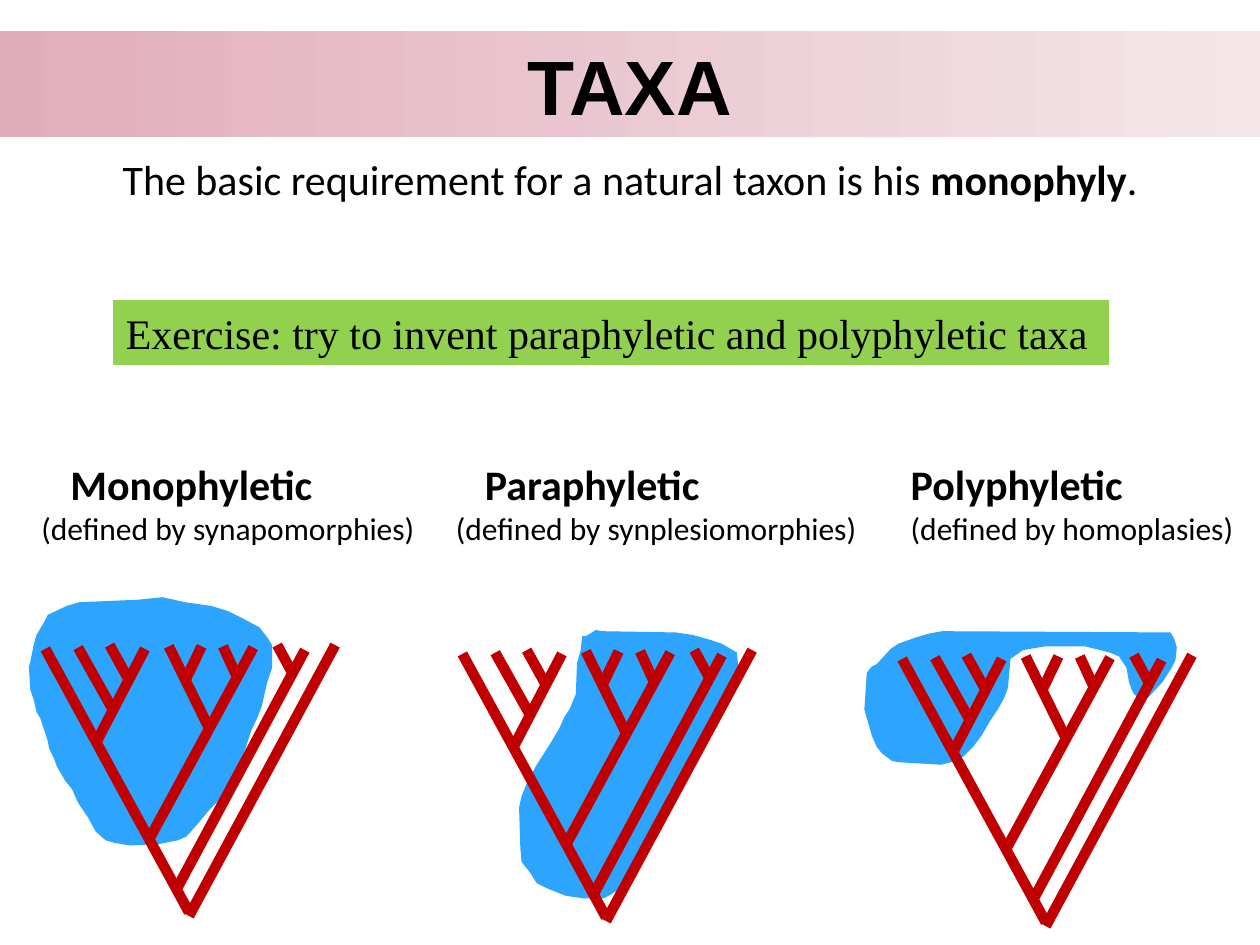
from lxml import etree
from pptx import Presentation
from pptx import util as u
from pptx.dml.color import RGBColor
from pptx.enum import shapes, text
from pptx.oxml.ns import qn

PX = 9144  # 100 px to the inch

BLACK = RGBColor(0x00, 0x00, 0x00)
BRANCH_RED = RGBColor(0xC0, 0x00, 0x00)
GROUP_BLUE = RGBColor(0x2D, 0xA5, 0xFF)
EXERCISE_GREEN = RGBColor(0x92, 0xD0, 0x50)
BAND_ROSE = RGBColor(0xE1, 0xAD, 0xBA)
BAND_PALE = RGBColor(0xF4, 0xE6, 0xE9)

# Branches of the cladogram, relative to its top left corner: x1, y1, x2, y2
BRANCHES = [
    (0, 3, 114, 212), (230, 0, 114, 215), (206, 4, 104, 194),
    (165, 2, 83, 153), (79, 3, 41, 76), (26, 2, 54, 52),
    (51, 0, 66, 27), (98, 1, 130, 66), (141, 1, 152, 25),
    (184, 0, 196, 22), (124, 1, 112, 26),
]

# Outlines of the marked groups, relative to the same corner
MONOPHYLETIC_GROUP = [
    (-1, -18), (-7, -8), (-9, -1), (-12, 14), (-13, 17), (-12, 35), (-9, 44),
    (-7, 53), (-4, 58), (-1, 67), (2, 76), (3, 82), (7, 90), (9, 96),
    (16, 108), (21, 114), (26, 125), (34, 137), (40, 148), (48, 155),
    (55, 157), (67, 159), (90, 158), (105, 155), (112, 152), (120, 143),
    (130, 131), (140, 121), (149, 109), (155, 91), (159, 82), (163, 69),
    (169, 56), (172, 48), (176, 30), (180, 18), (180, 0), (177, -5),
    (170, -14), (159, -20), (145, -27), (132, -31), (111, -34), (93, -38),
    (74, -36), (27, -34), (17, -31), (2, -24),
]
PARAPHYLETIC_GROUP = [
    (95, -11), (94, 0), (91, 10), (90, 35), (85, 47), (81, 53), (77, 62),
    (68, 77), (59, 91), (51, 106), (47, 116), (45, 125), (46, 157),
    (47, 168), (54, 177), (59, 185), (67, 189), (82, 195), (96, 197),
    (112, 197), (118, 194), (127, 188), (135, 181), (137, 178), (140, 159),
    (149, 149), (155, 140), (159, 129), (162, 119), (164, 113), (170, 106),
    (176, 93), (188, 79), (196, 64), (202, 51), (205, 39), (210, 30),
    (218, 20), (219, 15), (218, 2), (206, -5), (197, -8), (183, -12),
    (169, -14), (111, -15), (106, -16), (98, -11),
]
POLYPHYLETIC_GROUP = [
    (-20, 7), (-9, -5), (-3, -9), (11, -14), (21, -17), (32, -19),
    (213, -18), (216, -13), (218, -6), (217, 4), (214, 10), (207, 21),
    (195, 34), (188, 34), (184, 31), (182, 27), (180, 21), (178, 10),
    (172, 1), (165, -2), (153, -5), (145, -7), (114, -7), (96, -4), (86, 3),
    (84, 26), (81, 34), (76, 43), (70, 52), (63, 64), (57, 72), (48, 81),
    (39, 85), (31, 87), (-3, 85), (-8, 84), (-16, 78), (-20, 73),
    (-24, 64), (-28, 50), (-30, 43), (-28, 14), (-24, 9),
]

# Heading, definition, heading indent, text box, tree corner, group outline
COLUMNS = [
    ("Monophyletic", "(defined by synapomorphies)", 23,
     (23, 359, 318, 81), (36, 512), MONOPHYLETIC_GROUP),
    ("Paraphyletic", "(defined by synplesiomorphies)", 23,
     (352, 359, 353, 81), (367, 516), PARAPHYLETIC_GROUP),
    ("Polyphyletic", "(defined by homoplasies)", 0,
     (713, 359, 280, 81), (716, 520), POLYPHYLETIC_GROUP),
]


def emu(*lengths):
    return [length * PX for length in lengths]


def add_run(paragraph, wording, size, font="Calibri", bold=False):
    run = paragraph.add_run()
    run.text = wording
    run.font.size = u.Pt(size)
    run.font.name = font
    run.font.bold = bold
    run.font.color.rgb = BLACK


def add_text_frame(slide, box):
    frame = slide.shapes.add_textbox(*emu(*box)).text_frame
    frame.word_wrap = True
    return frame


def add_panel(slide, box, align):
    panel = slide.shapes.add_shape(shapes.MSO_SHAPE.RECTANGLE, *emu(*box))
    panel.shadow.inherit = False
    panel.text_frame.word_wrap = True
    panel.text_frame.vertical_anchor = text.MSO_ANCHOR.MIDDLE
    panel.text_frame.paragraphs[0].alignment = align
    return panel


def title_band(slide, box):
    band = add_panel(slide, box, text.PP_ALIGN.CENTER)
    band.line.fill.background()
    band.fill.gradient()
    band.fill.gradient_angle = 0
    for stop, color in zip(band.fill.gradient_stops, (BAND_ROSE, BAND_PALE)):
        stop.color.rgb = color
    add_run(band.text_frame.paragraphs[0], "TAXA", 44, "Arial", True)


def requirement(slide, box):
    sentence = add_text_frame(slide, box).paragraphs[0]
    sentence.alignment = text.PP_ALIGN.CENTER
    add_run(sentence, "The basic requirement for a natural taxon is his ", 24)
    add_run(sentence, "monophyly", 24, bold=True)
    add_run(sentence, ".", 24)


def exercise(slide, box):
    panel = add_panel(slide, box, text.PP_ALIGN.LEFT)
    panel.fill.solid()
    panel.fill.fore_color.rgb = EXERCISE_GREEN
    panel.line.color.rgb = EXERCISE_GREEN
    panel.line.width = u.Pt(0.75)
    add_run(panel.text_frame.paragraphs[0],
            "Exercise: try to invent paraphyletic and polyphyletic taxa",
            24, "Times New Roman")


def cladogram(slide, left, top, group_outline):
    # Marked group behind the branches
    points = [(left + x, top + y) for x, y in group_outline]
    builder = slide.shapes.build_freeform(*points[0], scale=PX)
    builder.add_line_segments(points[1:], close=True)
    group = builder.convert_to_shape()
    group.shadow.inherit = False
    group.fill.solid()
    group.fill.fore_color.rgb = GROUP_BLUE
    group.line.fill.background()

    # Branches
    for x1, y1, x2, y2 in BRANCHES:
        branch = slide.shapes.add_connector(
            shapes.MSO_CONNECTOR.STRAIGHT,
            *emu(left + x1, top + y1, left + x2, top + y2))
        branch.line.color.rgb = BRANCH_RED
        branch.line.width = u.Pt(6)
        etree.SubElement(branch._element.spPr, qn("a:effectLst"))


def definition(slide, box, heading, explanation, indent):
    frame = add_text_frame(slide, box)
    title = frame.paragraphs[0]
    title._p.get_or_add_pPr().set("marL", str(indent * PX))
    add_run(title, heading, 24, bold=True)
    add_run(frame.add_paragraph(), explanation, 18)


def main():
    prs = Presentation()
    prs.slide_width, prs.slide_height = emu(1000, 750)
    slide = prs.slides.add_slide(prs.slide_layouts[6])

    title_band(slide, (0, 25, 1000, 84))
    requirement(slide, (0, 117, 1000, 91))
    exercise(slide, (90, 239, 790, 50))
    for heading, explanation, indent, box, corner, outline in COLUMNS:
        cladogram(slide, *corner, outline)
        definition(slide, box, heading, explanation, indent)

    prs.save("out.pptx")


if __name__ == "__main__":
    main()
